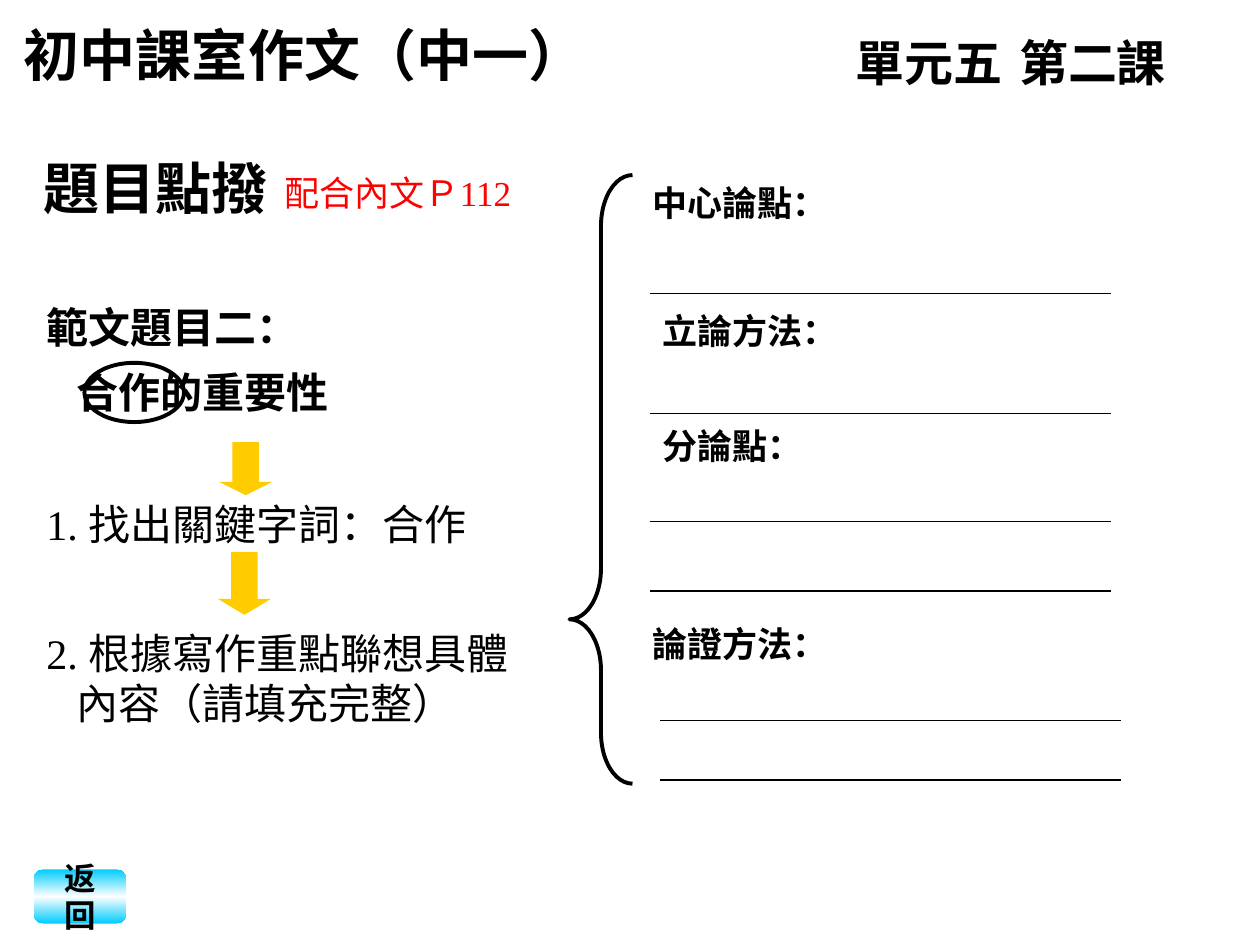
from copy import deepcopy

from pptx import Presentation
from pptx.dml.color import RGBColor
from pptx.enum import shapes, text
from pptx.oxml.ns import qn
from pptx.oxml.xmlchemy import OxmlElement
from pptx.util import Inches, Pt

COLORS = {"ink": "000000", "note": "FF0000", "arrow": "FFCC00",
          "button": "00CCFF", "shine": "FFFFFF"}
SANS, SERIF = "DejaVu Sans", "Times New Roman"
SHAPE = shapes.MSO_SHAPE


def rgb(name):
    return RGBColor.from_string(COLORS[name])


class Worksheet:
    """Holds the text style and the slide being filled."""

    def __init__(self, slide):
        self.slide = slide
        self.style = {"name": SANS, "size": Pt(24), "bold": False}

    def fill_text(self, frame, paragraphs, color="ink", indents=(), spacing=1.0,
                  align=text.PP_ALIGN.LEFT, anchor=text.MSO_ANCHOR.TOP, **style):
        """Each paragraph is a list of (words, font name) runs."""
        settings = {"word_wrap": True, "auto_size": text.MSO_AUTO_SIZE.NONE,
                    "vertical_anchor": anchor}
        for key, value in settings.items():
            setattr(frame, key, value)
        for i, runs in enumerate(paragraphs):
            paragraph = frame.paragraphs[0] if i == 0 else frame.add_paragraph()
            props = paragraph._p.get_or_add_pPr()
            props.set("marL", str(Inches(indents[i] if indents else 0)))
            props.set("indent", "0")
            props.append(OxmlElement("a:buNone"))
            layout = {"alignment": align, "line_spacing": spacing,
                      "space_before": Pt(0), "space_after": Pt(0)}
            for key, value in layout.items():
                setattr(paragraph, key, value)
            for words, font_name in runs:
                run = paragraph.add_run()
                run.text = words
                for key, value in {**self.style, **style, "name": font_name}.items():
                    setattr(run.font, key, value)
                run.font.color.rgb = rgb(color)
                east_asian = OxmlElement("a:ea")
                east_asian.set("typeface", SANS)
                run.font._element.append(east_asian)

    def place(self, holder, box, paragraphs, **style):
        for key, value in zip(("left", "top", "width", "height"), box):
            setattr(holder, key, Inches(value))
        self.fill_text(holder.text_frame, paragraphs, **style)

    def label(self, box, paragraphs, **style):
        holder = self.slide.shapes.add_textbox(*map(Inches, box))
        self.fill_text(holder.text_frame, paragraphs, **style)

    def shape(self, kind, box, fill=None, line=None, adjustments=()):
        drawn = self.slide.shapes.add_shape(kind, *map(Inches, box))
        drawn.shadow.inherit = False
        for i, value in enumerate(adjustments):
            drawn.adjustments[i] = value
        if fill:
            drawn.fill.solid()
            drawn.fill.fore_color.rgb = rgb(fill)
        else:
            drawn.fill.background()
        if line:
            drawn.line.color.rgb = rgb(line)
            drawn.line.width = Pt(2.25)
        else:
            drawn.line.fill.background()
        return drawn

    def button(self, box, words):
        drawn = self.shape(SHAPE.FLOWCHART_ALTERNATE_PROCESS, box)
        drawn.fill.gradient()
        drawn.fill.gradient_angle = 90
        first = drawn._element.spPr.find(".//" + qn("a:gs"))
        first.addnext(deepcopy(first))
        stops = zip(drawn.fill.gradient_stops, (0, 0.5, 1),
                    ("button", "shine", "button"))
        for stop, position, color in stops:
            stop.position = position
            stop.color.rgb = rgb(color)
        self.fill_text(drawn.text_frame, [[(words, "Arial")]], size=Pt(18), bold=True,
                       align=text.PP_ALIGN.CENTER, anchor=text.MSO_ANCHOR.MIDDLE)

    def answer_line(self, left, top, length=3.66):
        line = self.slide.shapes.add_connector(
            shapes.MSO_CONNECTOR.STRAIGHT, Inches(left), Inches(top),
            Inches(left + length), Inches(top))
        line.line.color.rgb = rgb("ink")
        line.line.width = Pt(0.75)
        line._element.spPr.append(OxmlElement("a:effectLst"))


def main():
    deck = Presentation()
    deck.slide_width, deck.slide_height = Inches(10), Inches(7.5)
    slide = deck.slides.add_slide(deck.slide_layouts[1])
    sheet = Worksheet(slide)
    course, topic = slide.placeholders

    sheet.place(course, (0.09, 0.11, 5.22, 0.63),
                [[("初中課室作文（中一）", "Roboto")]], size=Pt(32), bold=True)
    sheet.label((6.69, 0.21, 3.35, 0.57), [[("單元五 第二課", "Roboto")]],
                size=Pt(28), bold=True)
    sheet.label((0.25, 1.17, 3.08, 0.63), [[("題目點撥", "Arial")]],
                size=Pt(32), bold=True)
    sheet.label((2.16, 1.31, 2.47, 0.43), [[("配合內文Ｐ112", SERIF)]],
                size=Pt(20), color="note")

    sheet.place(topic, (0.27, 2.22, 5, 1.14),
                [[("範文題目二：", SANS)], [("合作的重要性", SANS)]],
                indents=(0, 0.24), spacing=1.3, bold=True)
    sheet.shape(SHAPE.OVAL, (0.67, 2.88, 0.79, 0.47), line="ink")

    sheet.label((0.27, 3.91, 4.88, 0.5),
                [[("1. ", SERIF), ("找出關鍵字詞：合作", SANS)]])
    sheet.label((0.27, 4.93, 4.17, 0.9),
                [[("2. ", SERIF), ("根據寫作重點聯想具體", SANS)],
                 [("內容（請填充完整）", SANS)]], indents=(0, 0.24))
    for left, top, height, head in ((1.74, 3.51, 0.42, 0.25), (1.73, 4.38, 0.5, 0.3)):
        sheet.shape(SHAPE.DOWN_ARROW, (left, top, 0.42, height), fill="arrow",
                    adjustments=(0.5, head))

    sheet.shape(SHAPE.LEFT_BRACE, (4.52, 1.39, 0.5, 4.83), line="ink",
                adjustments=(0.81, 0.73))
    outline = (("中心論點：", 5.08, 1.39, 5.16, (2.33,)),
               ("立論方法：", 5.16, 2.41, 5.16, (3.28,)),
               ("分論點：", 5.16, 3.32, 5.16, (4.14, 4.69)),
               ("論證方法：", 5.08, 4.89, 5.24, (5.72, 6.19)))
    for heading, left, top, line_left, line_tops in outline:
        sheet.label((left, top, 3.83, 0.43), [[(heading, SANS)]],
                    size=Pt(20), bold=True)
        for line_top in line_tops:
            sheet.answer_line(line_left, line_top)

    sheet.button((0.27, 6.9, 0.73, 0.43), "返回")
    deck.save("out.pptx")


if __name__ == "__main__":
    main()
